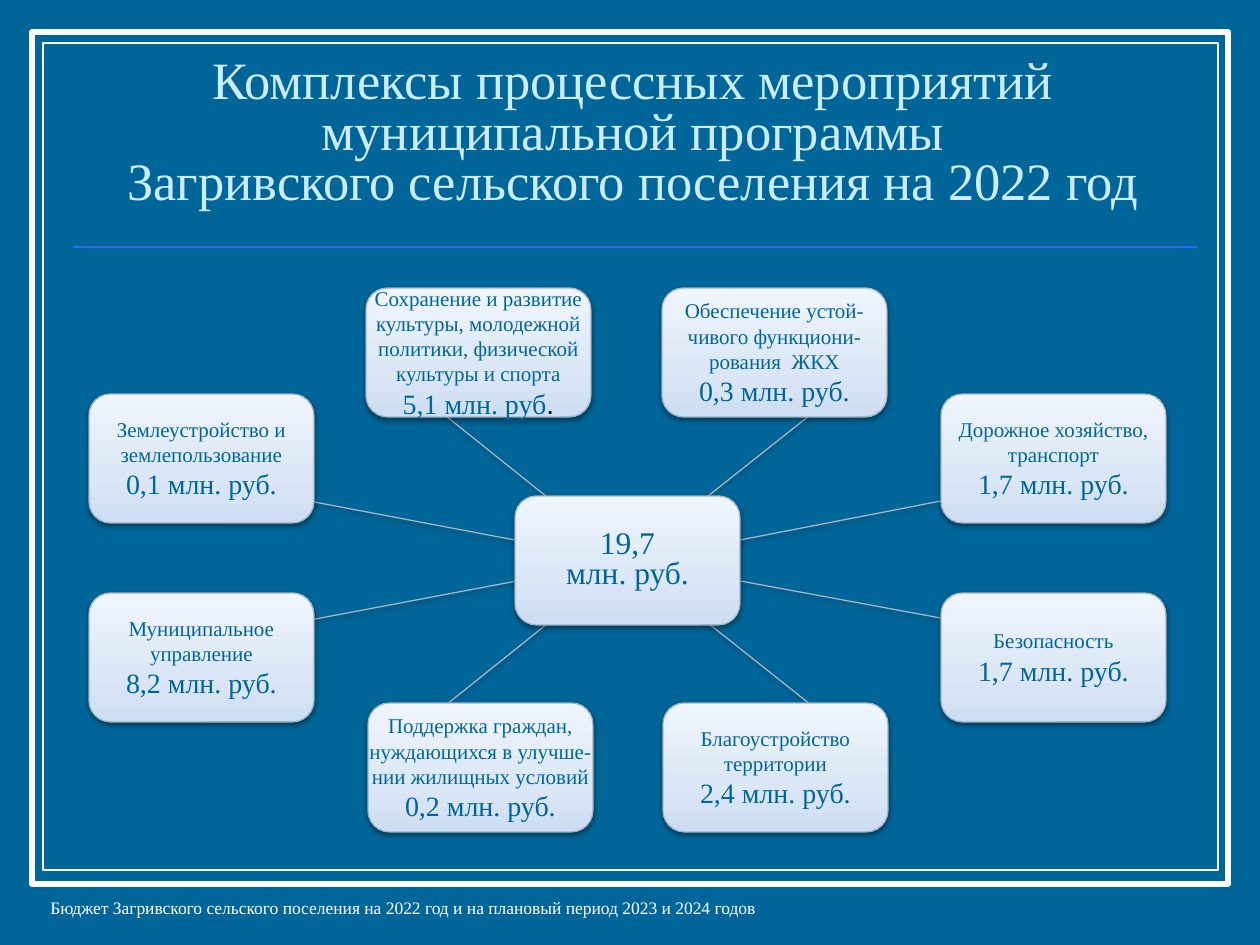
from pptx import Presentation
from pptx import util as u
from pptx.dml.color import RGBColor
from pptx.enum import shapes, text
from pptx.oxml import parse_xml
from pptx.oxml.ns import nsdecls, qn

BLUE = RGBColor(0x00, 0x66, 0x99)
WHITE = RGBColor(0xFF, 0xFF, 0xFF)
PALE = RGBColor(0xCC, 0xEC, 0xFF)
RULE = RGBColor(0x33, 0x66, 0xFF)
EDGE = RGBColor(0xA5, 0xB4, 0xC6)
DARK = RGBColor(0x16, 0x16, 0x16)
STOPS = [(0, "CDDDF3"), (35, "DBE7F6"), (100, "F0F5FC")]
PX = 914400 / 126
BOX_W, BOX_H = 225, 129
CENTER = text.PP_ALIGN.CENTER

SHADOW = (f'<a:effectLst {nsdecls("a")}><a:outerShdw blurRad="40000" dist="20000" '
          'dir="5400000" rotWithShape="0"><a:srgbClr val="000000">'
          '<a:alpha val="38000"/></a:srgbClr></a:outerShdw></a:effectLst>')
GRADIENT = f'<a:gsLst {nsdecls("a")}>' + "".join(
    f'<a:gs pos="{pos * 1000}"><a:srgbClr val="{color}"/></a:gs>'
    for pos, color in STOPS) + "</a:gsLst>"


def px(*values):
    return [u.Emu(round(v * PX)) for v in values]


def add_text(p, words, size, color, font="Times New Roman"):
    for i, line in enumerate(words.split("\n")):
        if i:
            p.add_line_break()
        r = p.add_run()
        r.text = line
        r.font.size = u.Pt(size)
        r.font.name = font
        r.font.color.rgb = color


prs = Presentation()
prs.slide_width, prs.slide_height = px(1260, 945)
s = prs.slides.add_slide(prs.slide_layouts[6])
s.background.fill.solid()
s.background.fill.fore_color.rgb = BLUE

# Double frame
for box, width in (((32, 32, 1196, 852), 3.5), ((43, 43, 1175, 827), 0.75)):
    sp = s.shapes.add_shape(shapes.MSO_SHAPE.RECTANGLE, *px(*box))
    sp.shadow.inherit = False
    sp.fill.solid()
    sp.fill.fore_color.rgb = BLUE
    sp.line.color.rgb = WHITE
    sp.line.width = u.Pt(width)

# Rule under the title
rule = s.shapes.add_connector(shapes.MSO_CONNECTOR.STRAIGHT, *px(73, 247, 1197, 247))
rule.line.color.rgb = RULE
rule.line.width = u.Pt(1)
rule._element.spPr.append(parse_xml(f'<a:effectLst {nsdecls("a")}/>'))

# Title and footer
for box, words, size, color, align, spacing in (
    ((71, 87, 1124, 130),
     "Комплексы процессных мероприятий муниципальной программы\n"
     "Загривского сельского поселения на 2022 год", 30, PALE, CENTER, 0.8),
    ((38, 861, 1183, 63),
     "Бюджет Загривского сельского поселения на 2022 год и на плановый период "
     "2023 и 2024 годов", 10, WHITE, text.PP_ALIGN.LEFT, 1.0),
):
    tf = s.shapes.add_textbox(*px(*box)).text_frame
    tf.word_wrap = True
    tf.vertical_anchor = text.MSO_ANCHOR.BOTTOM
    p = tf.paragraphs[0]
    p.alignment = align
    p.line_spacing = spacing
    add_text(p, words, size, color)

# Spokes from the hub to each programme
for ends in (
    (562, 509, 431, 404), (520, 541, 309, 501), (522, 580, 310, 620), (562, 612, 431, 717),
    (694, 612, 825, 716), (735, 580, 946, 619), (735, 541, 946, 500), (693, 508, 824, 404),
):
    spoke = s.shapes.add_connector(shapes.MSO_CONNECTOR.STRAIGHT, *px(*ends))
    spoke.line.color.rgb = EDGE
    spoke.line.width = u.Pt(0.75)
    spoke._element.spPr.append(parse_xml(SHADOW))

# Boxes: left, top, wrap, line spacing, paragraphs as (words, size)
boxes = [
    (515, 496, False, 0.8, [("19,7", 18), ("млн. руб.", 18)]),
    (366, 288, True, 1.0, [
        ("Сохранение и развитие культуры, молодежной политики, "
         "физической культуры и спорта", 12), ("5,1 млн. руб", 16)]),
    (89, 394, True, 1.0, [("Землеустройство и землепользование", 12), ("0,1 млн. руб.", 16)]),
    (89, 593, True, 1.0, [("Муниципальное управление", 12), ("8,2 млн. руб.", 16)]),
    (368, 703, False, 1.0, [
        ("Поддержка граждан,\nнуждающихся в улучше-", 12),
        ("нии жилищных условий", 12), ("0,2 млн. руб.", 16)]),
    (663, 703, False, 1.0, [("Благоустройство\nтерритории", 12), ("2,4 млн. руб.", 16)]),
    (941, 593, False, 1.0, [("Безопасность", 12), ("1,7 млн. руб.", 16)]),
    (941, 394, False, 1.0, [
        ("Дорожное хозяйство,", 12), ("транспорт", 12), ("1,7 млн. руб.", 16)]),
    (662, 288, True, 1.0, [
        ("Обеспечение устой-чивого функциони-рования  ЖКХ", 12), ("0,3 млн. руб.", 16)]),
]
for left, top, wrap, spacing, paragraphs in boxes:
    sp = s.shapes.add_shape(shapes.MSO_SHAPE.ROUNDED_RECTANGLE, *px(left, top, BOX_W, BOX_H))
    sp.fill.gradient()
    sp.fill.gradient_angle = 90
    grad = sp._element.spPr.find(qn("a:gradFill"))
    grad.replace(grad.find(qn("a:gsLst")), parse_xml(GRADIENT))
    sp.line.color.rgb = EDGE
    sp.line.width = u.Pt(0.75)
    sp._element.spPr.append(parse_xml(SHADOW))
    tf = sp.text_frame
    tf.margin_left = tf.margin_right = tf.margin_top = tf.margin_bottom = 0
    tf.word_wrap = wrap
    tf.vertical_anchor = text.MSO_ANCHOR.MIDDLE
    for i, (words, size) in enumerate(paragraphs):
        p = tf.add_paragraph() if i else tf.paragraphs[0]
        p.alignment = CENTER
        p.line_spacing = spacing
        add_text(p, words, size, BLUE)
    if not words.endswith("."):
        add_text(p, ".", size, DARK, "Arial")

prs.save("out.pptx")
